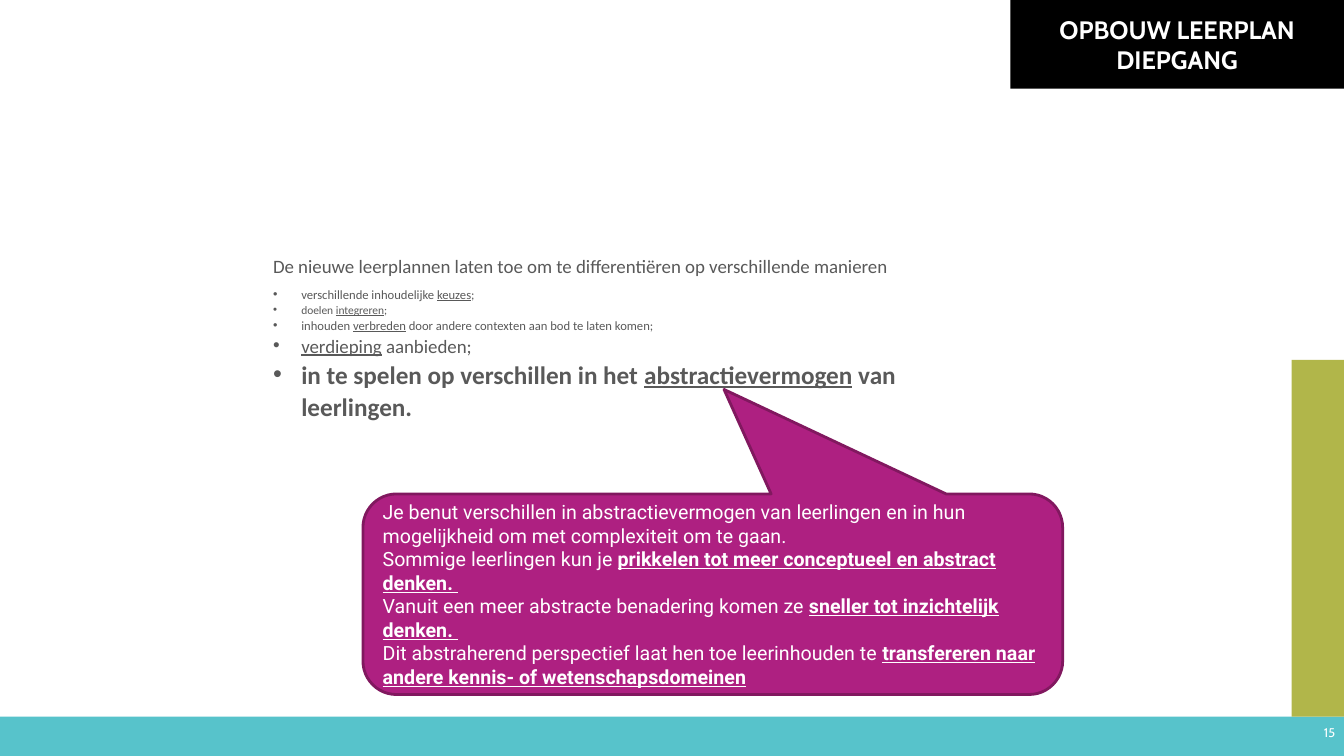
from pptx import Presentation
from pptx.dml.color import RGBColor
from pptx.enum.shapes import MSO_SHAPE
from pptx.enum.text import MSO_ANCHOR, PP_ALIGN
from pptx.oxml import parse_xml
from pptx.util import Inches, Pt

RECTANGLE = MSO_SHAPE.RECTANGLE
CALLOUT = MSO_SHAPE.ROUNDED_RECTANGULAR_CALLOUT
MIDDLE = MSO_ANCHOR.MIDDLE
LEFT, CENTER, RIGHT = PP_ALIGN.LEFT, PP_ALIGN.CENTER, PP_ALIGN.RIGHT
DRAWING = 'xmlns:a="http://schemas.openxmlformats.org/drawingml/2006/main"'
GREY, WHITE = "595959", "FFFFFF"

deck = Presentation()
deck.slide_width, deck.slide_height = Inches(13.33), Inches(7.5)
page = deck.slides.add_slide(deck.slide_layouts[6])


def add_block(kind, left, top, width, height, color):
    block = page.shapes.add_shape(kind, Inches(left), Inches(top), Inches(width), Inches(height))
    block.shadow.inherit = False
    block.fill.solid()
    block.fill.fore_color.rgb = RGBColor.from_string(color)
    block.line.fill.background()
    block.text_frame.word_wrap = True
    block.text_frame.vertical_anchor = MIDDLE
    return block


def write(para, spans, font, size, color, align=LEFT, bold=None):
    """Fill a paragraph with (text, marks) spans; marks hold b for bold, u for underline."""
    para.alignment = align
    para.font.name = font
    para.font.size = Pt(size)
    para.font.bold = bold
    para.font.color.rgb = RGBColor.from_string(color)
    for text, marks in spans:
        span = para.add_run()
        span.text = text
        if "b" in marks:
            span.font.bold = True
        if "u" in marks:
            span.font.underline = True


# Footer band, side band and slide number
add_block(RECTANGLE, 0, 7.11, 13.33, 0.39, "57C3CB")
add_block(RECTANGLE, 12.81, 3.57, 0.52, 3.54, "B1B64A")
number = page.shapes.add_textbox(Inches(10.33), Inches(7.03), Inches(3.01), Inches(0.47))
number.text_frame.word_wrap = True
number.text_frame.vertical_anchor = MIDDLE
write(number.text_frame.paragraphs[0], [("15", "")], "Cabin", 9, WHITE, RIGHT)

# Introduction and bullet list
body = page.shapes.add_textbox(Inches(2.61), Inches(2.46), Inches(7.45), Inches(1.45))
body.text_frame.word_wrap = True
intro = body.text_frame.paragraphs[0]
intro.line_spacing = 1.07
intro.space_after = Pt(6)
write(intro, [("De nieuwe leerplannen laten toe om te differentiëren op verschillende manieren", "")],
      "Calibri", 13.5, GREY)

bullets = [
    (9, None, [("verschillende inhoudelijke ", ""), ("keuzes", "u"), (";", "")]),
    (8.2, None, [("doelen ", ""), ("integreren", "u"), (";", "")]),
    (9, None, [("inhouden ", ""), ("verbreden", "u"),
               (" door andere contexten aan bod te laten komen;", "")]),
    (13.5, None, [("verdieping", "u"), (" aanbieden;", "")]),
    (18, True, [("in te spelen op verschillen in het ", ""), ("abstractievermogen", "u"),
                (" van leerlingen.", "")]),
]
for size, bold, spans in bullets:
    para = body.text_frame.add_paragraph()
    para.line_spacing = 1.07
    properties = para._p.get_or_add_pPr()
    properties.set("marL", str(Inches(0.28)))
    properties.set("indent", str(Inches(-0.28)))
    properties.append(parse_xml(f'<a:buClr {DRAWING}><a:srgbClr val="{GREY}"/></a:buClr>'))
    properties.append(parse_xml(f'<a:buFont {DRAWING} typeface="Arial"/>'))
    properties.append(parse_xml(f'<a:buChar {DRAWING} char="•"/>'))
    write(para, spans, "Calibri", size, GREY, bold=bold)
para.space_after = Pt(6)

# Title block
title = add_block(RECTANGLE, 10.02, 0, 3.31, 0.88, "000000")
write(title.text_frame.paragraphs[0], [("OPBOUW LEERPLAN DIEPGANG", "")],
      "Cabin", 18, WHITE, CENTER, True)

# Callout pointing at the last bullet
callout = add_block(CALLOUT, 3.6, 4.9, 6.94, 1.99, "AE2081")
callout.line.color.rgb = RGBColor.from_string("81185F")
callout.line.width = Pt(2)
for index, value in enumerate((0.016, -1.021, 0.167)):
    callout.adjustments[index] = value

remarks = [
    [("Je benut verschillen in abstractievermogen van leerlingen en in hun "
      "mogelijkheid om met complexiteit om te gaan.", "")],
    [("Sommige leerlingen kun je ", ""),
     ("prikkelen tot meer conceptueel en abstract denken. ", "bu")],
    [("Vanuit een meer abstracte benadering komen ze ", ""),
     ("sneller tot inzichtelijk denken. ", "bu")],
    [("Dit abstraherend perspectief laat hen toe leerinhouden te ", ""),
     ("transfereren naar andere kennis- of wetenschapsdomeinen", "bu")],
]
frame = callout.text_frame
for index, spans in enumerate(remarks):
    para = frame.add_paragraph() if index else frame.paragraphs[0]
    write(para, spans, "Roboto", 14, WHITE)

deck.save("out.pptx")
